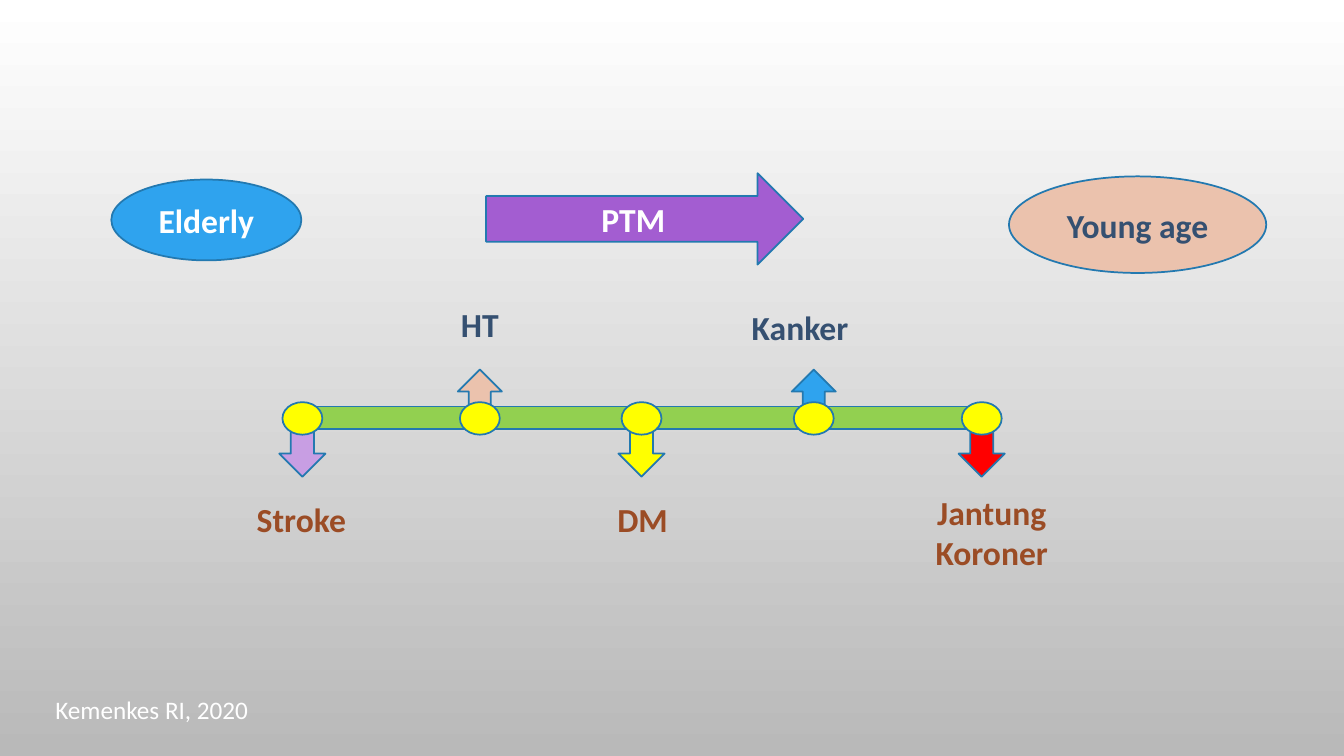
from dataclasses import dataclass

from pptx import Presentation
from pptx.dml.color import RGBColor
from pptx.enum.shapes import MSO_SHAPE as Preset
from pptx.enum.text import MSO_ANCHOR as Anchor, PP_ALIGN as Align
from pptx.util import Pt

PX = 9525

WHITE = RGBColor(0xFF, 0xFF, 0xFF)
GRAY = RGBColor(0xB9, 0xB9, 0xB9)
OUTLINE = RGBColor(0x23, 0x79, 0xB0)
GREEN = RGBColor(0x92, 0xD0, 0x50)
YELLOW = RGBColor(0xFF, 0xFF, 0x00)
RED = RGBColor(0xFF, 0x00, 0x00)
BLUE = RGBColor(0x2F, 0xA3, 0xEE)
PEACH = RGBColor(0xEB, 0xC2, 0xAD)
LILAC = RGBColor(0xC8, 0x9E, 0xE3)
PURPLE = RGBColor(0xA3, 0x5D, 0xD1)
NAVY = RGBColor(0x35, 0x50, 0x71)
BROWN = RGBColor(0x9B, 0x4C, 0x25)

HEADING = {"name": "Calibri", "size": Pt(24), "bold": True}
SOURCE = {"name": "Calibri", "size": Pt(18), "bold": False}


@dataclass
class Disease:
    name: str
    center: int
    above: bool
    arrow_fill: RGBColor
    label_center: int
    label_top: int
    label_width: int = 196
    label_height: int = 68


DISEASES = [
    Disease("Stroke", 288, False, LILAC, 287, 460),
    Disease("HT", 457, True, PEACH, 457, 275),
    Disease("DM", 611, False, YELLOW, 612, 460),
    Disease("Kanker", 775, True, BLUE, 762, 277),
    Disease("Jantung Koroner", 935, False, RED, 944, 461, 211, 92),
]


def paint_background(slide):
    fill = slide.background.fill
    fill.gradient()
    fill.gradient_angle = 270
    for stop, color, position in zip(fill.gradient_stops, (WHITE, GRAY), (0, 1)):
        stop.color.rgb = color
        stop.position = position


def add_box(slide, preset, left, top, width, height, fill=None):
    box = slide.shapes.add_shape(
        preset, *(length * PX for length in (left, top, width, height)))
    box.shadow.inherit = False
    if fill is None:
        box.fill.background()
        box.line.fill.background()
    else:
        box.fill.solid()
        box.fill.fore_color.rgb = fill
        box.line.color.rgb = OUTLINE
        box.line.width = Pt(1.25)
    return box


def write(box, text, color, font_format=HEADING):
    frame = box.text_frame
    frame.word_wrap = True
    frame.vertical_anchor = Anchor.MIDDLE
    paragraph = frame.paragraphs[0]
    paragraph.alignment = Align.CENTER
    run = paragraph.add_run()
    run.text = text
    for attribute, value in font_format.items():
        setattr(run.font, attribute, value)
    run.font.color.rgb = color


def add_disease_arrow(slide, disease):
    if disease.above:
        preset, top, width, height = Preset.UP_ARROW, 352, 42, 56
    else:
        preset, top, width, height = Preset.DOWN_ARROW, 386, 44, 68
    add_box(slide, preset, disease.center - width // 2, top, width, height,
            disease.arrow_fill)


def add_disease_node(slide, disease):
    add_box(slide, Preset.FLOWCHART_CONNECTOR, disease.center - 19, 383, 38, 31,
            YELLOW)


def add_disease_label(slide, disease):
    label = add_box(slide, Preset.FLOWCHART_PROCESS,
                    disease.label_center - disease.label_width // 2,
                    disease.label_top, disease.label_width, disease.label_height)
    write(label, disease.name, NAVY if disease.above else BROWN)


def add_timeline(slide):
    add_box(slide, Preset.MATH_MINUS, 156, 352, 913, 92, GREEN)
    for add_part in (add_disease_arrow, add_disease_node, add_disease_label):
        for disease in DISEASES:
            add_part(slide, disease)


def add_age_shift(slide):
    shift = add_box(slide, Preset.RIGHT_ARROW, 463, 165, 302, 87, PURPLE)
    write(shift, "PTM", WHITE)
    elderly = add_box(slide, Preset.OVAL, 106, 171, 181, 77, BLUE)
    write(elderly, "Elderly", WHITE)
    young = add_box(slide, Preset.OVAL, 961, 168, 245, 92, PEACH)
    write(young, "Young age", NAVY)


def main():
    deck = Presentation()
    deck.slide_width, deck.slide_height = 1280 * PX, 720 * PX
    slide = deck.slides.add_slide(deck.slide_layouts[6])
    paint_background(slide)
    add_timeline(slide)
    source = add_box(slide, Preset.FLOWCHART_PROCESS, 23, 655, 243, 41)
    write(source, "Kemenkes RI, 2020", WHITE, SOURCE)
    add_age_shift(slide)
    deck.save("out.pptx")


if __name__ == "__main__":
    main()
